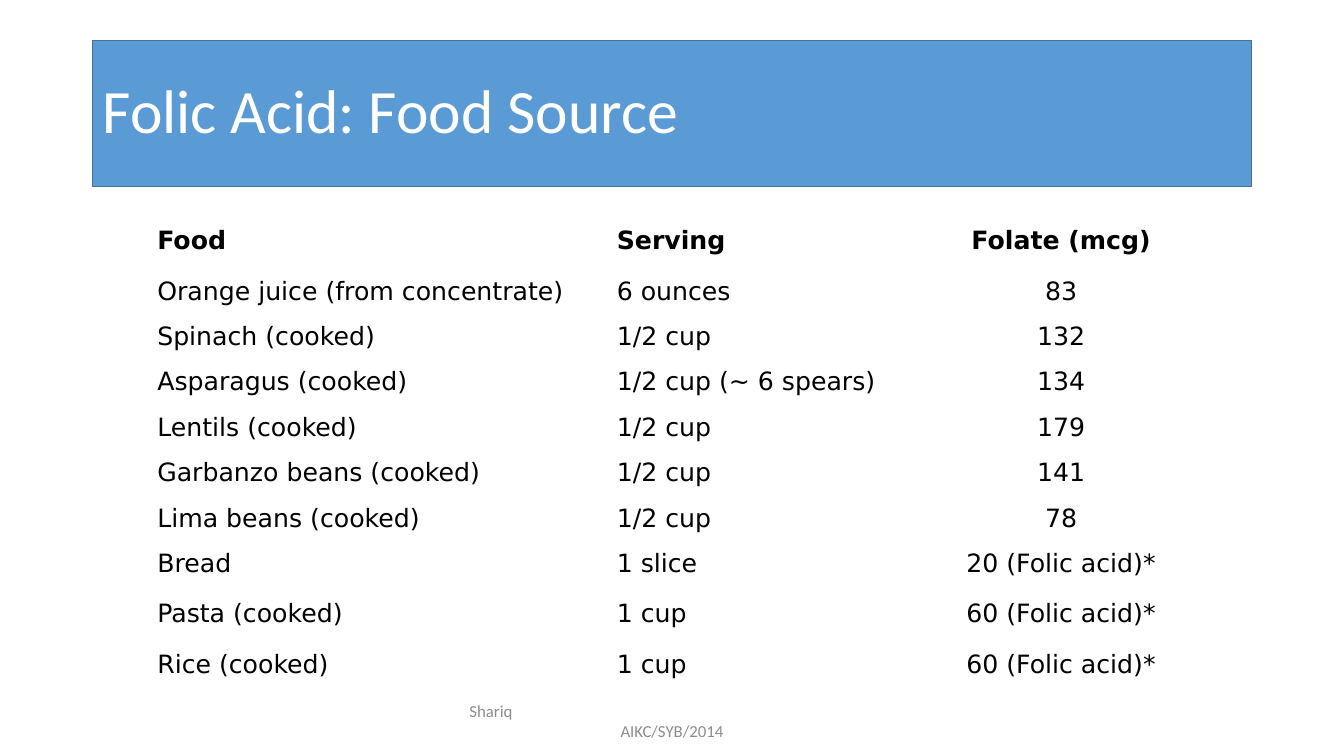
import pptx
import pptx.util
import pptx.dml.color
import pptx.enum.text
from pptx.util import Cm

COLOURS = {
    "banner": "5B9BD5",
    "banner_edge": "43739E",
    "white": "FFFFFF",
    "text": "000000",
    "footer": "8C8C8C",
}
ALIGN = pptx.enum.text.PP_ALIGN
MIDDLE = pptx.enum.text.MSO_ANCHOR.MIDDLE

HEADER = ("Food", "Serving", "Folate (mcg)")
FOODS = [
    ("Orange juice (from concentrate)", "6 ounces", "83"),
    ("Spinach (cooked)", "1/2 cup", "132"),
    ("Asparagus (cooked)", "1/2 cup (~ 6 spears)", "134"),
    ("Lentils (cooked)", "1/2 cup", "179"),
    ("Garbanzo beans (cooked)", "1/2 cup", "141"),
    ("Lima beans (cooked)", "1/2 cup", "78"),
    ("Bread", "1 slice", "20 (Folic acid)*"),
    ("Pasta (cooked)", "1 cup", "60 (Folic acid)*"),
    ("Rice (cooked)", "1 cup", "60 (Folic acid)*"),
]
COLUMN_WIDTHS = (11.58, 7.54, 7.82)
COLUMN_ALIGNS = (ALIGN.LEFT, ALIGN.LEFT, ALIGN.CENTER)
LOW_ROWS = (2, 4, 6)


def colour(name):
    return pptx.dml.color.RGBColor.from_string(COLOURS[name])


def format_paragraph(para, font_name, size, colour_name, align, bold=False):
    para.alignment = align
    para.font.name = font_name
    para.font.size = pptx.util.Pt(size)
    para.font.bold = bold
    para.font.color.rgb = colour(colour_name)


def format_title(title, text):
    title.left, title.top = Cm(2.33), Cm(1.02)
    title.width, title.height = Cm(29.21), Cm(3.68)
    title.fill.solid()
    title.fill.fore_color.rgb = colour("banner")
    title.line.color.rgb = colour("banner_edge")
    title.line.width = pptx.util.Pt(1)
    frame = title.text_frame
    frame.text = text
    frame.auto_size = pptx.enum.text.MSO_AUTO_SIZE.NONE
    frame.vertical_anchor = MIDDLE
    para = frame.paragraphs[0]
    para.line_spacing = 0.9
    format_paragraph(para, "Calibri", 44, "white", ALIGN.LEFT)


def add_food_table(page):
    rows = [HEADER] + FOODS
    frame = page.shapes.add_table(
        len(rows), len(HEADER), Cm(3.71), Cm(5.44), Cm(sum(COLUMN_WIDTHS)), Cm(11.89))
    table = frame.table
    table.first_row = False
    table.horz_banding = False
    for column, width in zip(table.columns, COLUMN_WIDTHS):
        column.width = Cm(width)
    for row_index, values in enumerate(rows):
        table.rows[row_index].height = Cm(1 if row_index in LOW_ROWS else 1.27)
        for column_index, value in enumerate(values):
            cell = table.cell(row_index, column_index)
            cell.text = value
            cell.vertical_anchor = MIDDLE
            cell.fill.solid()
            cell.fill.fore_color.rgb = colour("white")
            format_paragraph(cell.text_frame.paragraphs[0], "DejaVu Sans", 18, "text",
                             COLUMN_ALIGNS[column_index], bold=row_index == 0)


def add_footer(page, author, course):
    box = page.shapes.add_textbox(Cm(11.22), Cm(17.65), Cm(11.43), Cm(1.02))
    frame = box.text_frame
    frame.word_wrap = True
    frame.vertical_anchor = MIDDLE
    frame.text = f"{author}\n{course}"
    for para, align in zip(frame.paragraphs, (ALIGN.LEFT, ALIGN.CENTER)):
        format_paragraph(para, "Calibri", 12, "footer", align)
    # Indent the author's name
    frame.paragraphs[0]._p.get_or_add_pPr().set("marL", str(Cm(0.36)))


def main():
    deck = pptx.Presentation()
    deck.slide_width, deck.slide_height = Cm(33.87), Cm(19.05)
    page = deck.slides.add_slide(deck.slide_layouts.get_by_name("Title Only"))

    # Title banner
    format_title(page.shapes.title, "Folic Acid: Food Source")

    # Footer and food table
    add_footer(page, "Shariq", "AIKC/SYB/2014")
    add_food_table(page)

    deck.save("out.pptx")


if __name__ == "__main__":
    main()
